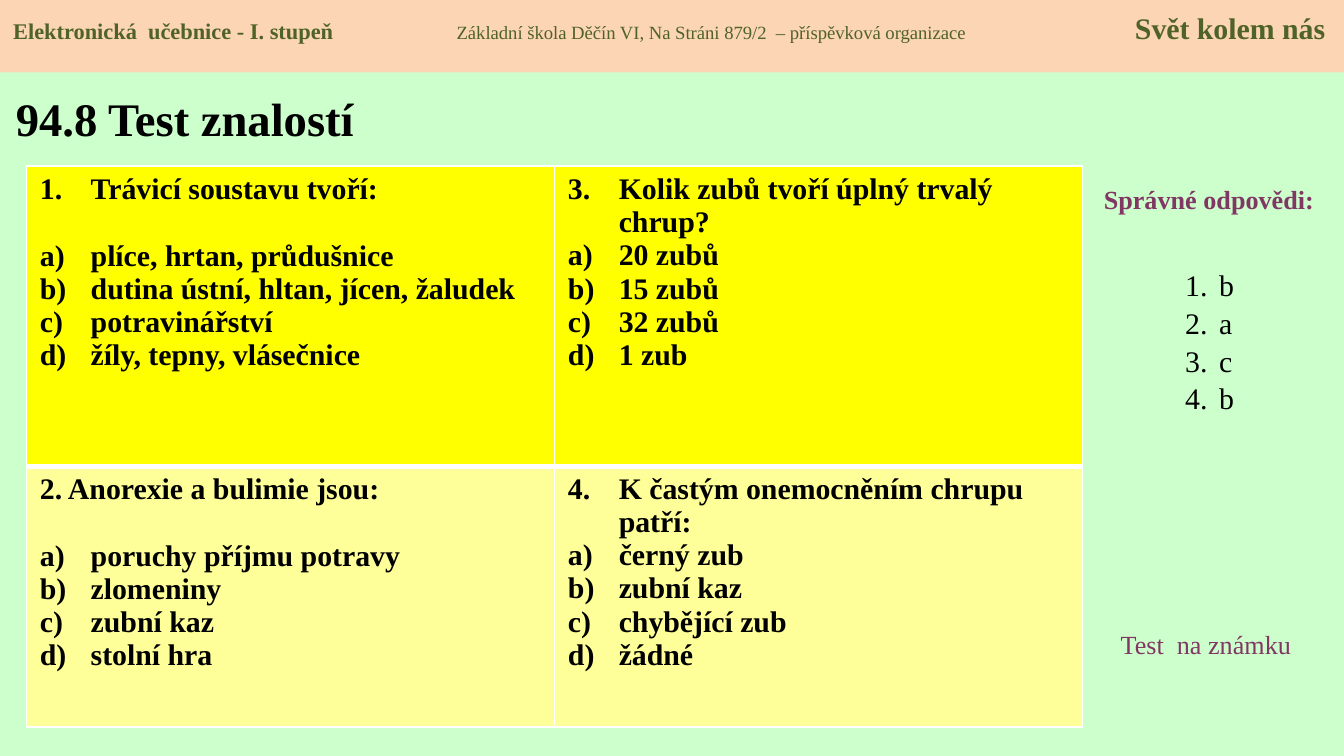
import pptx
import pptx.dml.color
import pptx.enum.shapes
import pptx.enum.text
import pptx.oxml
import pptx.oxml.ns
from pptx.util import Cm, Pt

GREEN, PURPLE, BLACK, WHITE = "4F6228", "813763", "000000", "FFFFFF"


def color(code):
    return pptx.dml.color.RGBColor.from_string(code)


def element(xml):
    """Parse one DrawingML element written without its namespace declaration."""
    tag, rest = xml.split(" ", 1)
    return pptx.oxml.parse_xml(f"{tag} {pptx.oxml.ns.nsdecls('a')} {rest}")


class SlideBuilder:
    font = "Times New Roman"

    def __init__(self, slide, background):
        self.slide = slide
        fill = slide.background.fill
        fill.solid()
        fill.fore_color.rgb = color(background)

    def run(self, paragraph, text, size, ink=BLACK, bold=False):
        run = paragraph.add_run()
        run.text = text
        run.font.name = self.font
        run.font.size = Pt(size)
        run.font.bold = bold
        run.font.color.rgb = color(ink)

    def indent(self, paragraph, hanging, numbering=None, start=1):
        """Give a hanging indent and, if named, automatic numbering."""
        properties = paragraph._p.get_or_add_pPr()
        properties.set("marL", str(hanging))
        properties.set("indent", str(-hanging))
        if numbering:
            properties.append(element(f'<a:buAutoNum type="{numbering}" startAt="{start}"/>'))

    def text_box(self, left, top, width, height):
        box = self.slide.shapes.add_textbox(Cm(left), Cm(top), Cm(width), Cm(height))
        box.text_frame.word_wrap = True
        return box.text_frame

    def label(self, place, text, size, ink=BLACK, bold=False, align=None, anchor=None):
        frame = self.text_box(*place)
        frame.vertical_anchor = anchor
        frame.paragraphs[0].alignment = align
        self.run(frame.paragraphs[0], text, size, ink, bold)

    def numbered_list(self, place, items, size, top_margin):
        frame = self.text_box(*place)
        frame.margin_top = Cm(top_margin)
        for index, item in enumerate(items):
            paragraph = frame.add_paragraph() if index else frame.paragraphs[0]
            self.indent(paragraph, Cm(0.64), "arabicPeriod")
            paragraph.space_after = Pt(1)
            self.run(paragraph, item, size)

    def header(self, width, height, fill, parts, tab_stops):
        """Draw the top band, with its parts set apart by tab stops."""
        band = self.slide.shapes.add_shape(
            pptx.enum.shapes.MSO_SHAPE.RECTANGLE, 0, 0, Cm(width), Cm(height))
        band.shadow.inherit = False
        band.fill.solid()
        band.fill.fore_color.rgb = color(fill)
        band.line.fill.background()
        frame = band.text_frame
        frame.word_wrap = True
        frame.vertical_anchor = pptx.enum.text.MSO_ANCHOR.TOP
        frame.margin_top = Cm(0.18)
        paragraph = frame.paragraphs[0]
        paragraph.alignment = pptx.enum.text.PP_ALIGN.LEFT
        stops = "".join(f'<a:tab pos="{Cm(stop)}" algn="l"/>' for stop in tab_stops)
        paragraph._p.get_or_add_pPr().append(element(f"<a:tabLst >{stops}</a:tabLst>"))
        for index, (text, size, bold) in enumerate(parts):
            self.run(paragraph, "\t" + text if index else text, size, GREEN, bold)

    def cell(self, cell, fill, thick_side, question, options, number, gap):
        properties = cell._tc.get_or_add_tcPr()
        for side in "LRTB":
            width = Pt(3 if side == thick_side else 1)
            properties.append(element(
                f'<a:ln{side} w="{width}"><a:solidFill><a:srgbClr val="{WHITE}"/>'
                f"</a:solidFill></a:ln{side}>"))
        cell.fill.solid()
        cell.fill.fore_color.rgb = color(fill)
        frame = cell.text_frame
        paragraph = frame.paragraphs[0]
        self.indent(paragraph, Cm(0.96), "arabicPeriod" if number else None, number or 1)
        if gap:
            paragraph.space_after = Pt(18)
        self.run(paragraph, question, 16, bold=True)
        for option in options:
            paragraph = frame.add_paragraph()
            self.indent(paragraph, Cm(0.96), "alphaLcParenR")
            self.run(paragraph, option, 16, bold=True)

    def quiz(self, left, top, column_width, row_heights, fills, questions):
        table = self.slide.shapes.add_table(
            2, 2, Cm(left), Cm(top), Cm(2 * column_width), Cm(sum(row_heights))).table
        for column in table.columns:
            column.width = Cm(column_width)
        for row, height in enumerate(row_heights):
            table.rows[row].height = Cm(height)
            for column, question in enumerate(questions[row]):
                self.cell(table.cell(row, column), fills[row], "BT"[row], *question)


QUESTIONS = [
    [("Trávicí soustavu tvoří:",
      ["plíce, hrtan, průdušnice", "dutina ústní, hltan, jícen, žaludek",
       "potravinářství", "žíly, tepny, vlásečnice"], 1, True),
     ("Kolik zubů tvoří úplný trvalý chrup?",
      ["20 zubů", "15 zubů", "32 zubů", "1 zub"], 3, False)],
    [("2. Anorexie a bulimie jsou:",
      ["poruchy příjmu potravy", "zlomeniny", "zubní kaz", "stolní hra"], None, True),
     ("K častým onemocněním chrupu patří:",
      ["černý zub", "zubní kaz", "chybějící zub", "žádné"], 4, False)],
]


def main():
    presentation = pptx.Presentation()
    presentation.slide_width, presentation.slide_height = Cm(25.4), Cm(14.29)
    slide = presentation.slides.add_slide(presentation.slide_layouts[6])
    builder = SlideBuilder(slide, "CCFFCC")

    builder.label((0.05, 1.4, 8.1, 1.65), "94.8 Test znalostí", 25, bold=True,
                  anchor=pptx.enum.text.MSO_ANCHOR.MIDDLE)
    builder.label((20.45, 3.35, 4.8, 0.86), "Správné odpovědi:", 14, PURPLE, True,
                  align=pptx.enum.text.PP_ALIGN.CENTER)
    builder.quiz(0.5, 3.14, 9.98, (5.67, 4.93), ("FFFF00", "FFFF99"), QUESTIONS)
    builder.numbered_list((22.15, 4.19, 1.4, 5.05), "bacb", 16, 0.86)
    builder.label((20.93, 11.76, 3.99, 0.86), "Test  na známku", 14, PURPLE)
    builder.header(25.4, 1.37, "FCD5B5", [
        ("Elektronická  učebnice - I. stupeň", 12, True),
        ("Základní škola Děčín VI, Na Stráni 879/2  – příspěvková organizace", 10, False),
        ("Svět kolem nás", 16, True),
    ], (8.38, 21.2))
    presentation.save("out.pptx")


if __name__ == "__main__":
    main()
